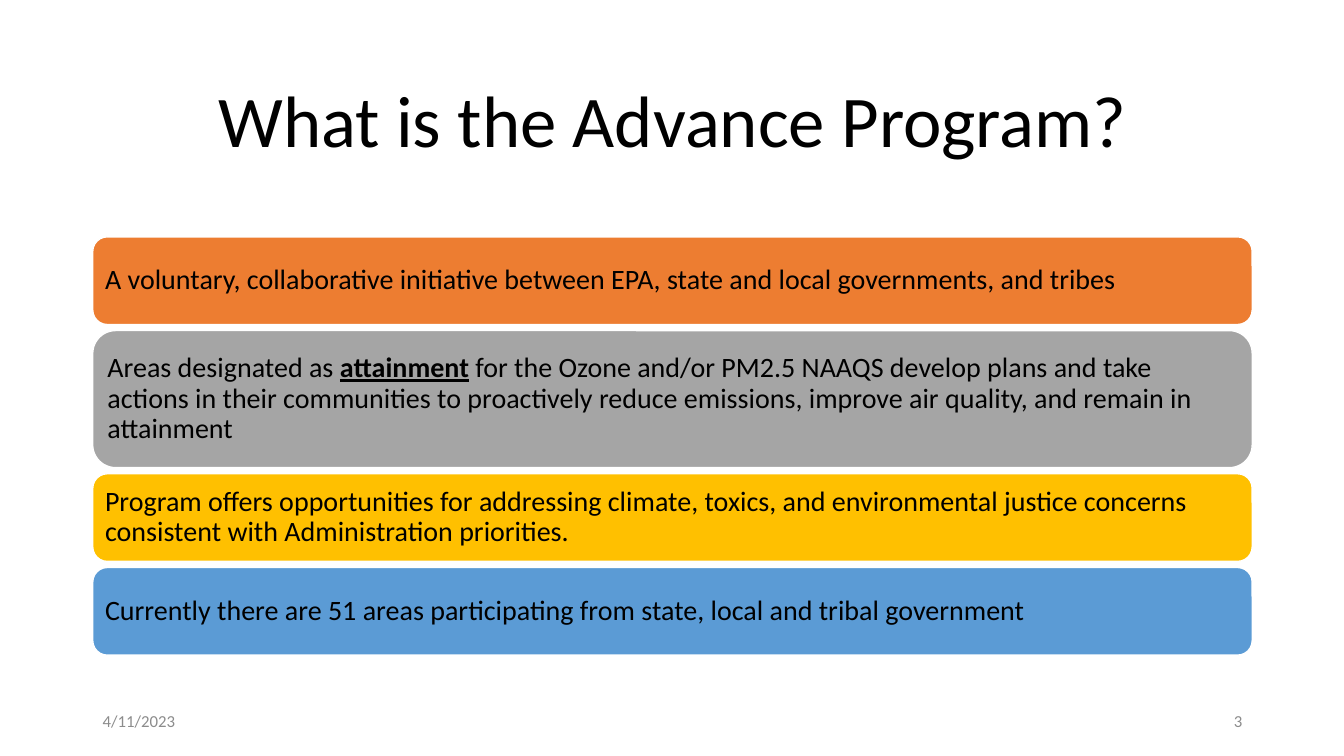
import dataclasses

import pptx
import pptx.dml.color
import pptx.enum.shapes
import pptx.enum.text
import pptx.util

Inches = pptx.util.Inches
Pt = pptx.util.Pt
Align = pptx.enum.text.PP_ALIGN


@dataclasses.dataclass(frozen=True)
class Theme:
    font: str = "Calibri"
    ink: str = "000000"
    muted: str = "8C8C8C"
    outline: str = "FFFFFF"
    orange: str = "ED7D31"
    gray: str = "A5A5A5"
    gold: str = "FFC000"
    blue: str = "5B9BD5"
    title_size: int = 52
    body_size: int = 20
    footer_size: int = 12


THEME = Theme()
MARGIN = 0.92
CONTENT_WIDTH = 11.5

STATEMENTS = [
    (THEME.orange, 0.87, [
        "A voluntary, collaborative initiative between EPA, state and local governments, and tribes",
    ]),
    (THEME.gray, 1.36, [
        "Areas designated as ",
        ("attainment", True),
        " for the Ozone and/or PM2.5 NAAQS develop plans and take actions in their communities "
        "to proactively reduce emissions, improve air quality, and remain in attainment",
    ]),
    (THEME.gold, 0.87, [
        "Program offers opportunities for addressing climate, toxics, and environmental justice "
        "concerns consistent with Administration priorities.",
    ]),
    (THEME.blue, 0.87, [
        "Currently there are 51 areas participating from state, local and tribal government",
    ]),
]


def color(value):
    return pptx.dml.color.RGBColor.from_string(value)


def write_text(frame, spans, size=THEME.body_size, ink=THEME.ink, align=Align.LEFT,
               line_spacing=1.0, inset=None):
    frame.word_wrap = True
    frame.auto_size = pptx.enum.text.MSO_AUTO_SIZE.NONE
    frame.vertical_anchor = pptx.enum.text.MSO_ANCHOR.MIDDLE
    if inset is not None:
        frame.margin_left = frame.margin_right = Inches(inset)
        frame.margin_top = frame.margin_bottom = Inches(inset)
    para = frame.paragraphs[0]
    para.alignment = align
    para.line_spacing = line_spacing
    for item in spans:
        words, emphasis = (item, False) if isinstance(item, str) else item
        span = para.add_run()
        span.text = words
        span.font.name = THEME.font
        span.font.size = Pt(size)
        span.font.color.rgb = color(ink)
        span.font.bold = emphasis
        span.font.underline = emphasis


def place_title(page, left, top, width, height):
    title = page.shapes.title
    title.left, title.top = Inches(left), Inches(top)
    title.width, title.height = Inches(width), Inches(height)
    write_text(title.text_frame, ["What is the Advance Program?"], size=THEME.title_size,
               align=Align.CENTER, line_spacing=0.9)


def place_statements(page, left, top, width, gap):
    for fill, height, spans in STATEMENTS:
        box = page.shapes.add_shape(
            pptx.enum.shapes.MSO_SHAPE.ROUNDED_RECTANGLE,
            Inches(left), Inches(top), Inches(width), Inches(height))
        box.shadow.inherit = False
        box.fill.solid()
        box.fill.fore_color.rgb = color(fill)
        box.line.color.rgb = color(THEME.outline)
        box.line.width = Pt(1)
        write_text(box.text_frame, spans, line_spacing=0.9, inset=0.08)
        top += height + gap


def place_footer(page, left, top, width, height):
    part_width = 3
    for offset, words, align in [
        (0, "4/11/2023", Align.LEFT),
        (width - part_width, "3", Align.RIGHT),
    ]:
        box = page.shapes.add_textbox(
            Inches(left + offset), Inches(top), Inches(part_width), Inches(height))
        write_text(box.text_frame, [words], size=THEME.footer_size, ink=THEME.muted, align=align)


def main():
    deck = pptx.Presentation()
    deck.slide_width, deck.slide_height = Inches(13.33), Inches(7.5)
    page = deck.slides.add_slide(deck.slide_layouts.get_by_name("Title Only"))
    place_title(page, MARGIN, 0.61, CONTENT_WIDTH, 1.24)
    place_statements(page, MARGIN, 2.35, CONTENT_WIDTH, gap=0.06)
    place_footer(page, MARGIN, 6.95, CONTENT_WIDTH, 0.4)
    deck.save("out.pptx")


if __name__ == "__main__":
    main()
